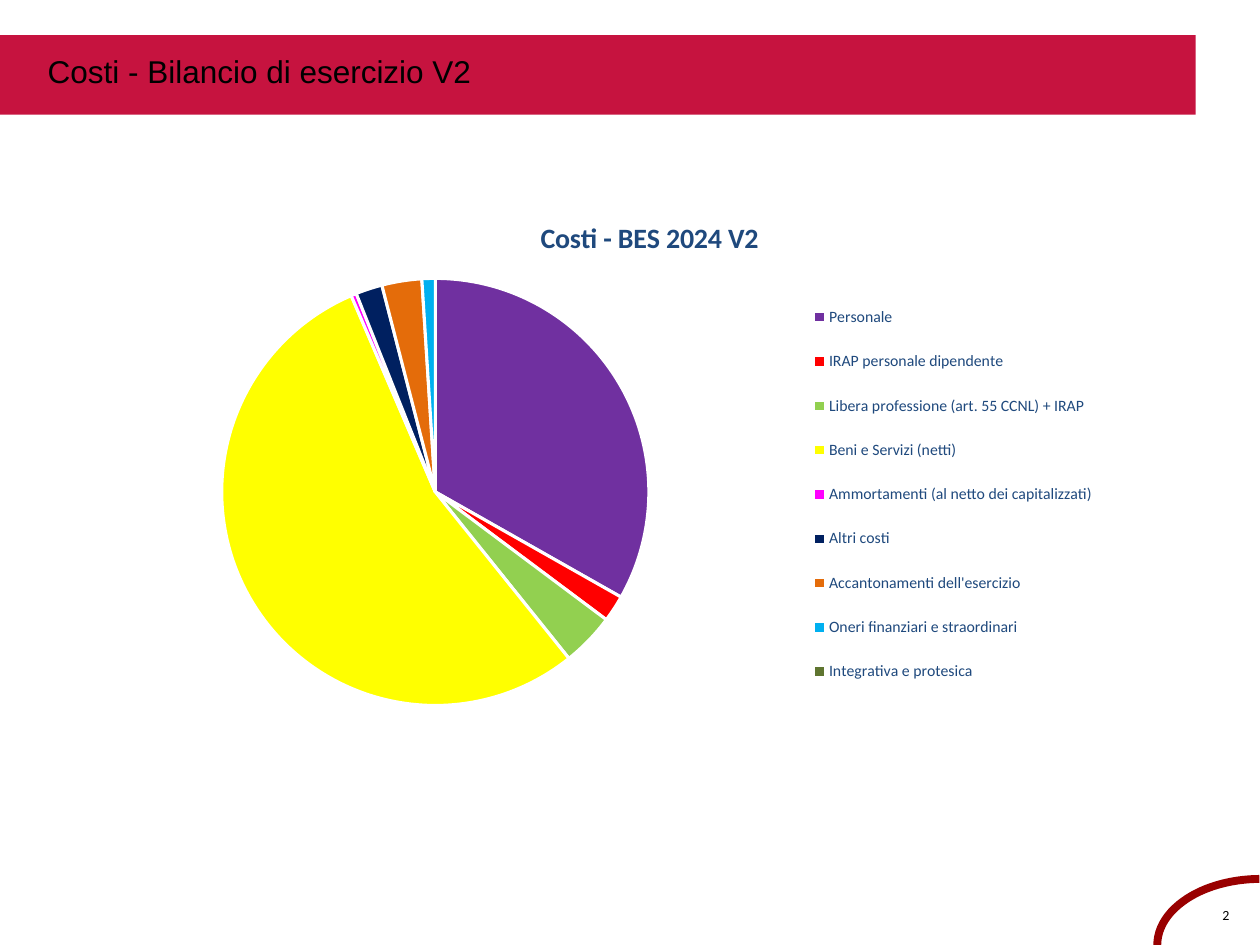
from lxml import etree
from pptx import Presentation
from pptx.chart.data import CategoryChartData
from pptx.dml.color import RGBColor
from pptx.enum.chart import XL_CHART_TYPE, XL_LEGEND_POSITION
from pptx.enum.shapes import MSO_SHAPE
from pptx.enum.text import PP_ALIGN
from pptx.oxml.ns import qn
from pptx.util import Inches, Pt

BLACK = RGBColor(0x00, 0x00, 0x00)
WHITE = RGBColor(0xFF, 0xFF, 0xFF)
CRIMSON = RGBColor(0xC6, 0x13, 0x3F)
DARK_RED = RGBColor(0x99, 0x00, 0x00)
NAVY = RGBColor(0x1F, 0x49, 0x7D)

CHART_WIDTH, CHART_HEIGHT = 8.58, 4.57

# Category, value, slice colour
COSTS = [
    ("Personale", 33, RGBColor(0x70, 0x30, 0xA0)),
    ("IRAP personale dipendente", 2, RGBColor(0xFF, 0x00, 0x00)),
    ("Libera professione (art. 55 CCNL) + IRAP", 4, RGBColor(0x92, 0xD0, 0x50)),
    ("Beni e Servizi (netti)", 54, RGBColor(0xFF, 0xFF, 0x00)),
    ("Ammortamenti (al netto dei capitalizzati)", 0.4, RGBColor(0xFF, 0x00, 0xFF)),
    ("Altri costi", 2, RGBColor(0x00, 0x20, 0x60)),
    ("Accantonamenti dell'esercizio", 3, RGBColor(0xE4, 0x6C, 0x0A)),
    ("Oneri finanziari e straordinari", 1, RGBColor(0x00, 0xB0, 0xF0)),
    ("Integrativa e protesica", 0, RGBColor(0x5F, 0x75, 0x30)),
]


def box(left, top, width, height):
    return Inches(left), Inches(top), Inches(width), Inches(height)


def set_format(target, values):
    for name, value in values.items():
        setattr(target, name, value)


def set_font(font, name, size, color, bold=False):
    set_format(font, {"name": name, "size": Pt(size), "bold": bold})
    font.color.rgb = color


def add_text(slide, position, text, font_format, frame_format, paragraph_format):
    frame = slide.shapes.add_textbox(*position).text_frame
    set_format(frame, {"word_wrap": True, **frame_format})
    paragraph = frame.paragraphs[0]
    paragraph.text = text
    set_format(paragraph, paragraph_format)
    set_font(paragraph.runs[0].font, *font_format)


def add_banner(slide):
    banner = slide.shapes.add_shape(MSO_SHAPE.RECTANGLE, *box(0, 0.28, 9.49, 0.63))
    banner.shadow.inherit = False
    banner.fill.solid()
    banner.fill.fore_color.rgb = CRIMSON
    banner.line.fill.background()


def add_corner_arc(slide):
    arc = slide.shapes.add_shape(MSO_SHAPE.ARC, *box(9.48, 6.68, 1.05, 1.64))
    arc.shadow.inherit = False
    arc.rotation = 270
    arc.adjustments[0] = 162
    arc.adjustments[1] = 215.34
    arc.fill.background()
    arc.line.color.rgb = DARK_RED
    arc.line.width = Pt(4.5)


def set_layout(element, index, inner=False, **inches):
    """Place a chart part by inches from the chart's top left corner."""
    for old in element.findall(qn("c:layout")):
        element.remove(old)
    layout = etree.Element(qn("c:layout"))
    manual = etree.SubElement(layout, qn("c:manualLayout"))
    settings = {"layoutTarget": "inner"} if inner else {}
    settings.update(xMode="edge", yMode="edge")
    for name, length in inches.items():
        settings[name] = length / (CHART_WIDTH if name in "xw" else CHART_HEIGHT)
    for name, value in settings.items():
        etree.SubElement(manual, qn("c:" + name)).set("val", str(value))
    element.insert(index, layout)


def add_cost_pie(slide):
    data = CategoryChartData()
    data.categories = [name for name, _, _ in COSTS]
    data.add_series("Series 1", [value for _, value, _ in COSTS])
    chart = slide.shapes.add_chart(
        XL_CHART_TYPE.PIE, *box(0.87, 1.55, CHART_WIDTH, CHART_HEIGHT), data).chart
    set_font(chart.font, "Calibri", 10, BLACK)

    # Title
    chart.has_title = True
    title_paragraph = chart.chart_title.text_frame.paragraphs[0]
    title_paragraph.text = "Costi - BES 2024 V2"
    set_font(title_paragraph.runs[0].font, "Calibri", 16, NAVY, True)

    # Legend
    chart.has_legend = True
    set_format(chart.legend, {"position": XL_LEGEND_POSITION.RIGHT,
                              "include_in_layout": False})
    set_font(chart.legend.font, "Calibri", 9, NAVY)

    # Slices
    plot = chart.plots[0]
    plot.vary_by_categories = True
    for index, (_, _, color) in enumerate(COSTS):
        point_format = plot.series[0].points[index].format
        point_format.fill.solid()
        point_format.fill.fore_color.rgb = color
        point_format.line.color.rgb = WHITE
        point_format.line.width = Pt(1.75)

    # Places of the title, legend and pie
    chart_element = chart._chartSpace.find(qn("c:chart"))
    set_layout(chart_element.find(qn("c:title")), 1, x=3.38, y=0.15)
    set_layout(chart_element.find(qn("c:legend")), 1, x=5.32, y=0.69, w=2.75, h=3.37)
    set_layout(chart_element.find(qn("c:plotArea")), 0, True,
               x=0.2, y=0.66, w=4.77, h=3.39)


def main():
    presentation = Presentation()
    presentation.slide_width = Inches(10)
    presentation.slide_height = Inches(7.5)
    slide = presentation.slides.add_slide(presentation.slide_layouts[6])

    # Page corner
    add_corner_arc(slide)
    margins = {"margin_left": 0, "margin_top": Inches(0.03),
               "margin_right": 0, "margin_bottom": 0}
    add_text(slide, box(9.57, 7.18, 0.32, 0.16), "2", ("Calibri", 8, BLACK),
             margins, {"alignment": PP_ALIGN.CENTER, "line_spacing": 0.93})

    # Heading
    add_banner(slide)
    add_text(slide, box(0.28, 0.36, 6.22, 0.71), "Costi - Bilancio di esercizio V2",
             ("Arial", 18, BLACK), {}, {"alignment": PP_ALIGN.LEFT})

    add_cost_pie(slide)
    presentation.save("out.pptx")


if __name__ == "__main__":
    main()
